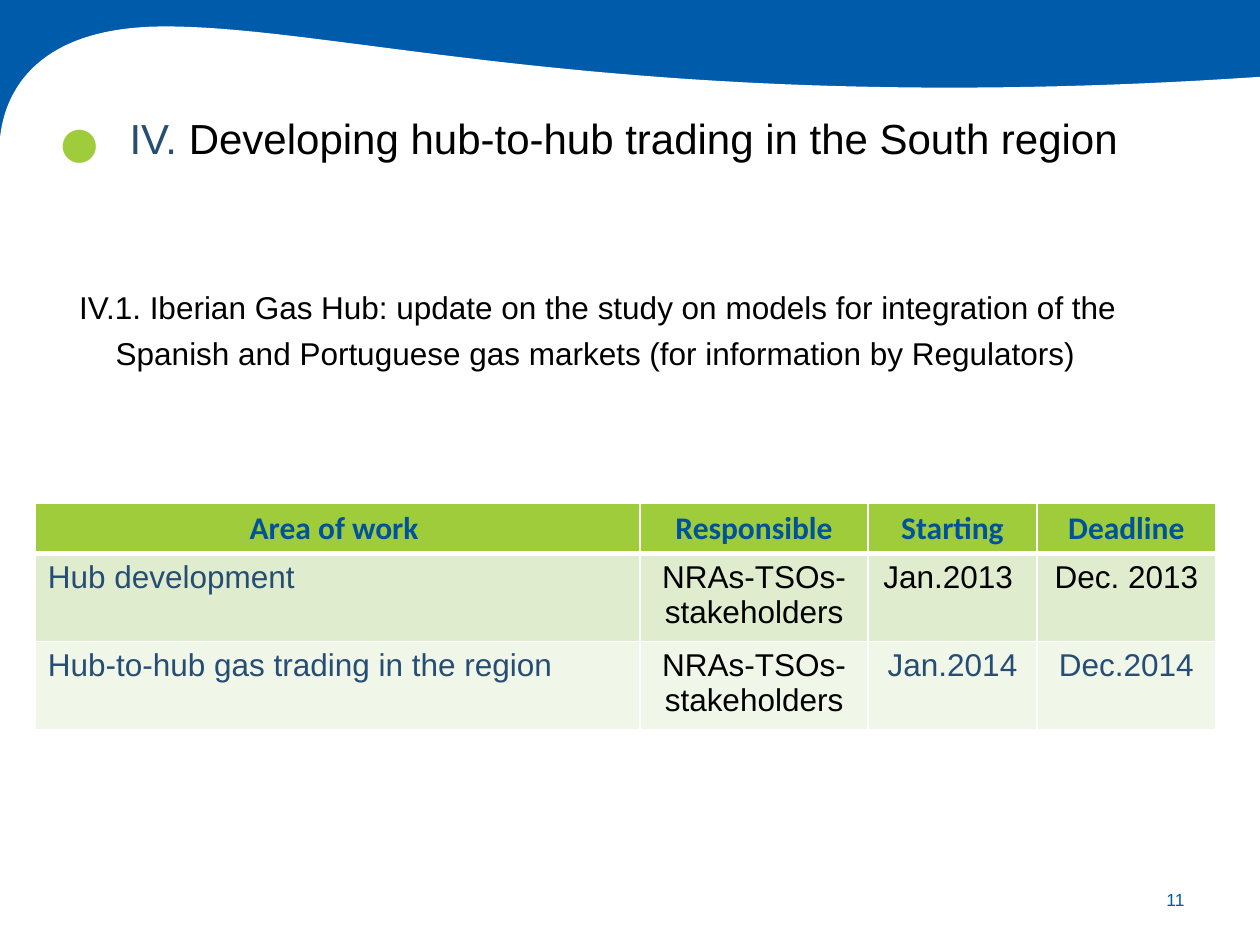
from dataclasses import dataclass

from pptx import Presentation
from pptx.dml.color import RGBColor
from pptx.enum.shapes import MSO_SHAPE
from pptx.enum.text import MSO_ANCHOR, PP_ALIGN
from pptx.oxml import parse_xml
from pptx.oxml.ns import nsdecls
from pptx.util import Inches, Pt


@dataclass(frozen=True)
class Theme:
    """Colours, fonts and type sizes of the slide."""
    blue: str = "005BAB"
    header_text: str = "00529B"
    navy: str = "264D74"
    green: str = "9ECC3B"
    white: str = "FFFFFF"
    black: str = "000000"
    bands: tuple = ("DFECCE", "F0F6E8")
    font: str = "Arial"
    header_font: str = "Calibri"
    number: int = 10
    body: int = 18
    title: int = 24
    bullet: int = 44


T = Theme()
WAVE = [
    ((10, 0.61), (5.1, 0.94), (2.76, 0.21), (1.31, 0.21)),
    ((1.31, 0.21), (0.23, 0.21), (0.03, 0.79), (0, 1.1)),
]
HEADER = ["Area of work ", "Responsible", "Starting", "Deadline"]
ROWS = [
    [("Hub development", T.navy), ("NRAs-TSOs-stakeholders", T.black),
     ("Jan.2013 ", T.black), ("Dec. 2013", T.black)],
    [("Hub-to-hub gas trading in the region", T.navy),
     ("NRAs-TSOs-stakeholders", T.black),
     ("Jan.2014", T.navy), ("Dec.2014", T.navy)],
]
COLUMN_WIDTHS = [4.8, 1.81, 1.34, 1.42]
ROW_HEIGHTS = [0.39, 0.7, 0.7]


def apply(obj, values):
    """Set every attribute named in a dict of format values."""
    for name, value in values.items():
        setattr(obj, name, value)


def paint(sp, color):
    """Give a shape a flat fill with no line or shadow."""
    sp.shadow.inherit = False
    sp.fill.solid()
    sp.fill.fore_color.rgb = RGBColor.from_string(color)
    sp.line.fill.background()


def bezier(curve, steps=60):
    """Return points along a cubic curve, after its start."""
    points = []
    for i in range(1, steps + 1):
        t = i / steps
        weights = ((1 - t) ** 3, 3 * t * (1 - t) ** 2, 3 * t * t * (1 - t), t ** 3)
        points.append(tuple(sum(w * c for w, c in zip(weights, axis))
                            for axis in zip(*curve)))
    return points


def add_wave(s):
    """Draw the blue top band with the white page curving over it."""
    band = s.shapes.add_shape(MSO_SHAPE.RECTANGLE, 0, 0, Inches(10), Inches(1.15))
    paint(band, T.blue)
    outline = [point for curve in WAVE for point in bezier(curve)]
    outline += [(0, 7.5), (10, 7.5)]
    x, y = WAVE[0][0]
    builder = s.shapes.build_freeform(Inches(x), Inches(y), scale=1.0)
    builder.add_line_segments([(Inches(x), Inches(y)) for x, y in outline])
    paint(builder.convert_to_shape(), T.white)


def add_run(p, text, size, color, font=T.font, bold=False):
    """Append one formatted run to a paragraph."""
    r = p.add_run()
    r.text = text
    apply(r.font, {"name": font, "size": Pt(size), "bold": bold})
    r.font.color.rgb = RGBColor.from_string(color)


def add_text(s, box, runs, size, para, frame=None, indent=(0, 0)):
    """Add a wrapped text box holding one paragraph."""
    tf = s.shapes.add_textbox(*map(Inches, box)).text_frame
    apply(tf, {"word_wrap": True, **(frame or {})})
    p = tf.paragraphs[0]
    apply(p, para)
    pPr = p._p.get_or_add_pPr()
    for name, value in zip(("marL", "indent"), indent):
        pPr.set(name, str(Inches(value)))
    for text, color in runs:
        add_run(p, text, size, color)


def set_borders(cell, widths):
    """Draw the white borders of a cell, widths in points by side."""
    tcPr = cell._tc.get_or_add_tcPr()
    for i, (side, width) in enumerate(widths.items()):
        tcPr.insert(i, parse_xml(
            f'<a:ln{side} {nsdecls("a")} w="{Pt(width)}"><a:solidFill>'
            f'<a:srgbClr val="{T.white}"/></a:solidFill></a:ln{side}>'))


def fill_cell(cell, text, align, fill, borders, **style):
    """Write and format one table cell."""
    cell.fill.solid()
    cell.fill.fore_color.rgb = RGBColor.from_string(fill)
    set_borders(cell, borders)
    p = cell.text_frame.paragraphs[0]
    p.alignment = align
    add_run(p, text, T.body, **style)


def add_work_table(s):
    """Add the table of work areas, owners and dates."""
    table = s.shapes.add_table(
        len(ROW_HEIGHTS), len(COLUMN_WIDTHS), Inches(0.28), Inches(3.99),
        Inches(sum(COLUMN_WIDTHS)), Inches(sum(ROW_HEIGHTS))).table
    for column, width in zip(table.columns, COLUMN_WIDTHS):
        column.width = Inches(width)
    for row, height in zip(table.rows, ROW_HEIGHTS):
        row.height = Inches(height)
    thin = dict.fromkeys("LRTB", 1)
    for c, text in enumerate(HEADER):
        fill_cell(table.cell(0, c), text, PP_ALIGN.CENTER, T.green,
                  {**thin, "B": 3}, color=T.header_text,
                  font=T.header_font, bold=True)
    for r, (row, band) in enumerate(zip(ROWS, T.bands), start=1):
        borders = {**thin, "T": 3} if r == 1 else thin
        for c, (text, color) in enumerate(row):
            align = PP_ALIGN.CENTER if c else PP_ALIGN.LEFT
            fill_cell(table.cell(r, c), text, align, band, borders, color=color)


def main():
    """Build the slide and save it."""
    prs = Presentation()
    apply(prs, {"slide_width": Inches(10), "slide_height": Inches(7.5)})
    s = prs.slides.add_slide(prs.slide_layouts[6])
    add_wave(s)
    add_text(s, (8.94, 6.94, 0.56, 0.4), [("11", T.blue)], T.number,
             {"alignment": PP_ALIGN.RIGHT}, {"vertical_anchor": MSO_ANCHOR.MIDDLE})
    add_text(s, (0.35, 0.57, 0.55, 0.94), [("●", T.green)], T.bullet,
             {"alignment": PP_ALIGN.CENTER}, {"vertical_anchor": MSO_ANCHOR.BOTTOM},
             (0.39, -0.39))
    add_text(s, (0.83, 0.84, 8.75, 0.5),
             [("IV. ", T.navy),
              ("Developing hub-to-hub trading in the South region", T.black)],
             T.title, {"alignment": PP_ALIGN.JUSTIFY, "space_after": Pt(2)},
             indent=(0.09, 0.01))
    add_text(s, (0.43, 2.18, 8.55, 0.87),
             [("IV.1. Iberian Gas Hub: update on the study on models for "
               "integration of the Spanish and Portuguese gas markets "
               "(for information by Regulators)", T.black)],
             T.body, {"line_spacing": 1.2, "space_after": Pt(2)},
             indent=(0.39, -0.29))
    add_work_table(s)
    prs.save("out.pptx")


if __name__ == "__main__":
    main()
